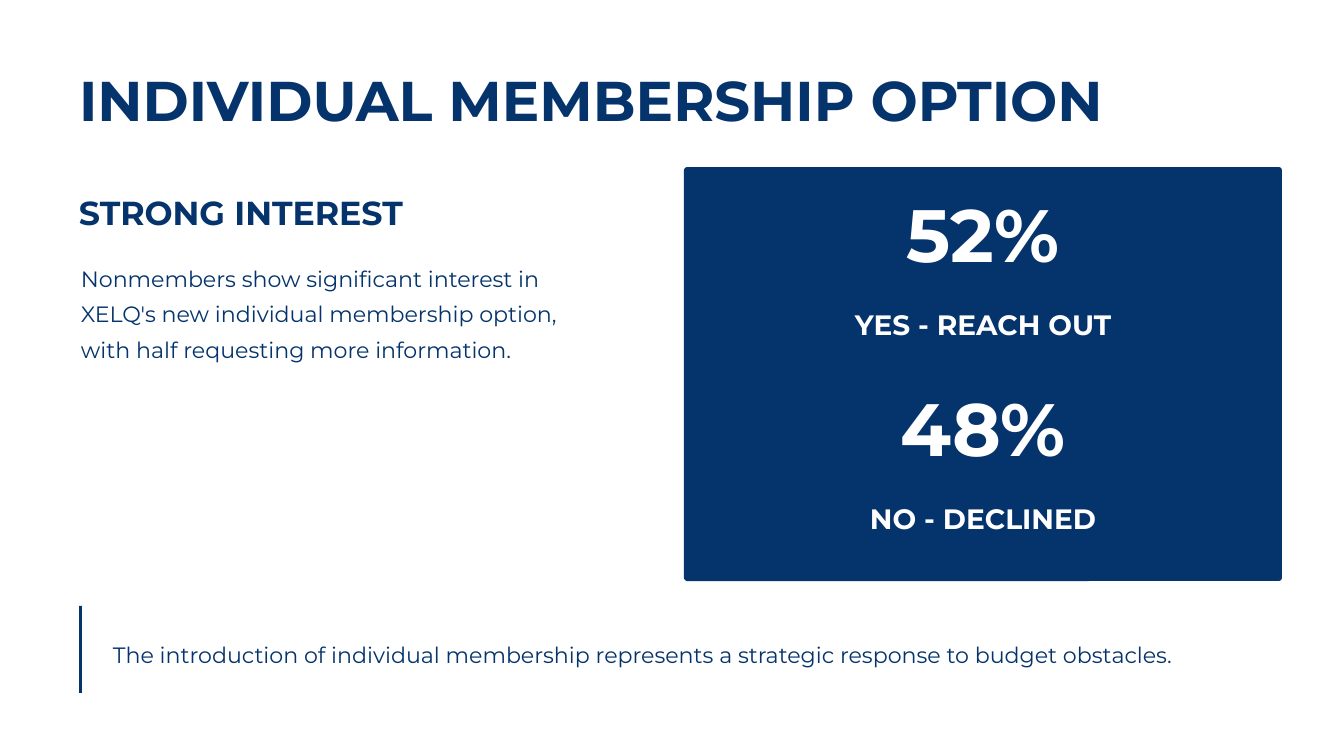
from dataclasses import dataclass

from pptx import Presentation
from pptx.dml.color import RGBColor
from pptx.enum.shapes import MSO_SHAPE as SHAPE
from pptx.enum.text import MSO_ANCHOR as ANCHOR, MSO_AUTO_SIZE as AUTO, PP_ALIGN as ALIGN
from pptx.util import Emu, Pt

EMU_PER_PX = 914400 / 84


@dataclass(frozen=True)
class Theme:
    font: str = "Montserrat"
    navy: RGBColor = RGBColor(0x05, 0x34, 0x6C)
    white: RGBColor = RGBColor(0xFF, 0xFF, 0xFF)
    title: float = 48
    heading: float = 28.5
    body: float = 19
    figure: float = 63.5
    label: float = 24


T = Theme()


def px(n):
    return Emu(round(n * EMU_PER_PX))


def write(sp, text, *, size, leading, color=T.navy, bold=False, align=ALIGN.LEFT):
    """Put one formatted paragraph into a shape."""
    tf = sp.text_frame
    tf.word_wrap = True
    tf.auto_size = AUTO.NONE
    tf.vertical_anchor = ANCHOR.TOP
    tf.margin_left = tf.margin_top = tf.margin_right = tf.margin_bottom = 0
    p = tf.paragraphs[0]
    p.alignment = align
    p.line_spacing = Pt(leading)
    r = p.add_run()
    r.text = text
    r.font.name = T.font
    r.font.size = Pt(size)
    r.font.bold = bold
    r.font.color.rgb = color


def add_title(slide, text, x, y, w, h):
    sp = slide.shapes.title
    sp.left, sp.top, sp.width, sp.height = map(px, (x, y, w, h))
    write(sp, text, size=T.title, leading=60, bold=True)


def add_text(slide, text, x, y, w, h, **fmt):
    sp = slide.shapes.add_textbox(*map(px, (x, y, w, h)))
    write(sp, text, **fmt)


def add_block(slide, kind, x, y, w, h):
    sp = slide.shapes.add_shape(kind, *map(px, (x, y, w, h)))
    sp.shadow.inherit = False
    sp.fill.solid()
    sp.fill.fore_color.rgb = T.navy
    sp.line.fill.background()
    return sp


def add_stat(slide, figure, label, y):
    """Large figure with its label below, centred in the card."""
    fmt = dict(color=T.white, bold=True, align=ALIGN.CENTER)
    add_text(slide, figure, 706, y, 554, 74, size=T.figure, leading=63.5, **fmt)
    add_text(slide, label, 706, y + 103, 554, 35, size=T.label, leading=30, **fmt)


def main():
    prs = Presentation()
    prs.slide_width, prs.slide_height = px(1344), px(756)
    slide = prs.slides.add_slide(prs.slide_layouts[5])
    slide.background.fill.solid()
    slide.background.fill.fore_color.rgb = T.white

    # Title and left column
    add_title(slide, "INDIVIDUAL MEMBERSHIP OPTION", 79, 63, 1120, 71)
    add_text(slide, "STRONG INTEREST", 79, 190, 338, 42,
             size=T.heading, leading=36, bold=True)
    add_text(slide, "Nonmembers show significant interest in XELQ's new individual "
             "membership option, with half requesting more information.",
             81, 256, 504, 178, size=T.body, leading=30.5)

    # Survey result card
    card = add_block(slide, SHAPE.ROUNDED_RECTANGLE, 684, 167, 598, 414)
    card.adjustments[0] = 0.008
    stats = [("52%", "YES - REACH OUT"), ("48%", "NO - DECLINED")]
    for i, (figure, label) in enumerate(stats):
        add_stat(slide, figure, label, 203 + 194 * i)

    # Closing remark with side rule
    add_text(slide, "The introduction of individual membership represents a "
             "strategic response to budget obstacles.",
             113, 632, 1152, 36, size=T.body, leading=30.5)
    add_block(slide, SHAPE.RECTANGLE, 79, 606, 3, 87)

    prs.save("out.pptx")


if __name__ == "__main__":
    main()
